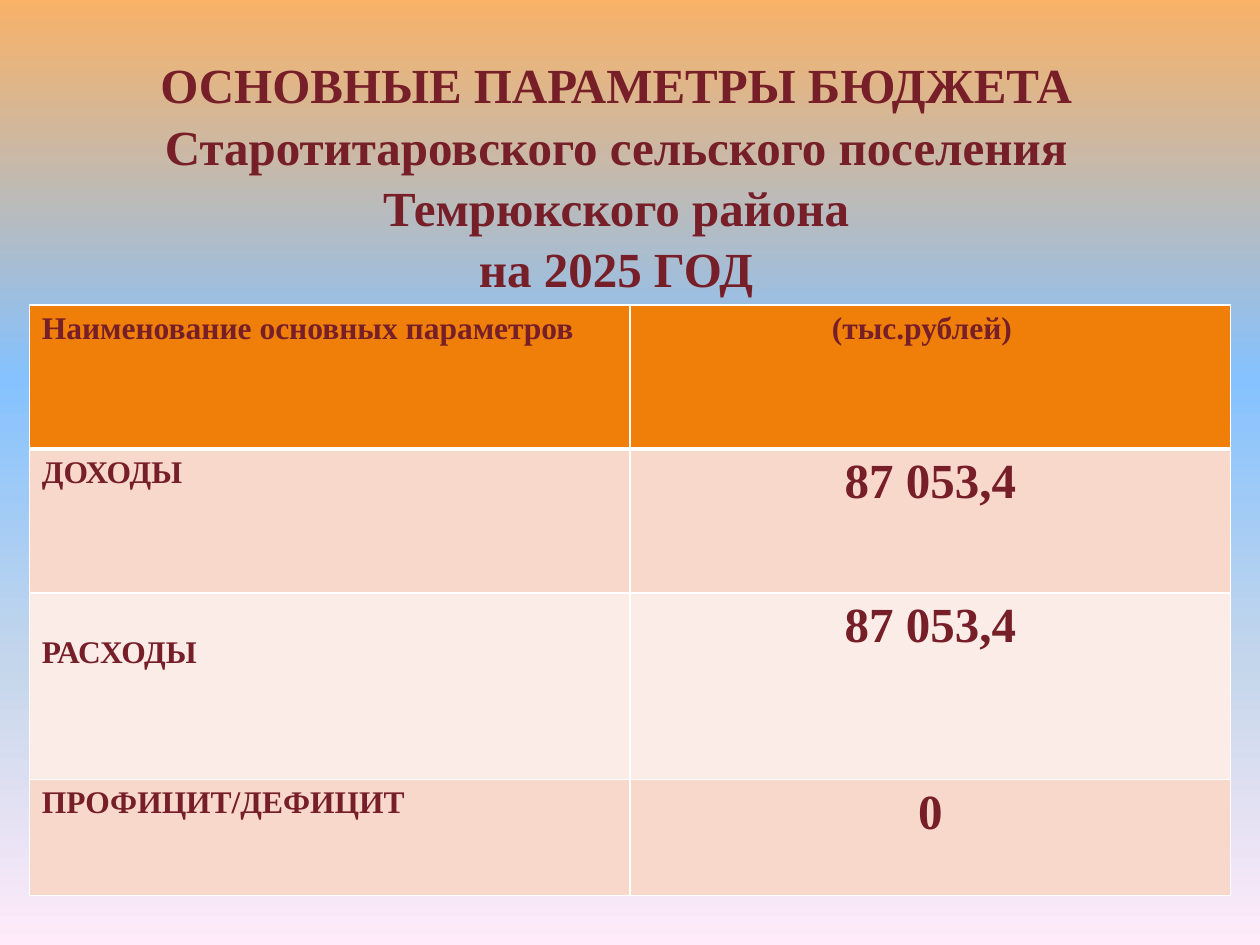
from lxml import etree
from pptx import Presentation
from pptx.dml.color import RGBColor
from pptx.enum import text as t
from pptx.oxml import ns
from pptx.util import Cm, Pt

COLORS = {
    "text": "771F28",
    "header": "F07F09",
    "band": "F9D8CC",
    "light": "FCECE7",
    "border": "FFFFFF",
}
BACKGROUND = [(0, "F9B268"), (40, "85C2FF"), (70, "C4D6EB"), (100, "FFEBFA")]
TITLE = (
    "ОСНОВНЫЕ ПАРАМЕТРЫ БЮДЖЕТА Старотитаровского сельского поселения "
    "Темрюкского района\nна 2025 ГОД"
)
ROWS = [
    ("Наименование основных параметров", "(тыс.рублей)"),
    ("ДОХОДЫ", "87 053,4"),
    ("РАСХОДЫ", "87 053,4"),
    ("ПРОФИЦИТ/ДЕФИЦИТ", "0"),
]
ROW_FILLS = ["header", "band", "light", "band"]
ROW_HEIGHTS = [2.9, 2.9, 3.76, 2.34]


def write_text(frame, content, size=18, align=t.PP_ALIGN.LEFT, spacing=1.0):
    """Fill a text frame with bold text, one paragraph per line."""
    frame.text = content
    for paragraph in frame.paragraphs:
        paragraph.alignment = align
        paragraph.line_spacing = spacing
        for run in paragraph.runs:
            run.font.name = "Times New Roman"
            run.font.size = Pt(size)
            run.font.bold = True
            run.font.color.rgb = RGBColor.from_string(COLORS["text"])


def add_color(parent, color):
    """Append an RGB colour element."""
    etree.SubElement(parent, ns.qn("a:srgbClr"), val=color)


class BudgetSlide:
    """Hold the slide and build its elements in the budget style."""

    def __init__(self, presentation):
        self.slide = presentation.slides.add_slide(presentation.slide_layouts[5])

    def background(self, stops):
        """Paint a top-to-bottom gradient behind the slide."""
        fill = self.slide.background.fill
        fill.gradient()
        fill.gradient_angle = 270
        stop_list = next(self.slide.element.iter(ns.qn("a:gsLst")))
        for stop in list(stop_list):
            stop_list.remove(stop)
        for position, color in stops:
            stop = etree.SubElement(stop_list, ns.qn("a:gs"), pos=str(position * 1000))
            add_color(stop, color)

    def title(self, content, left, top, width, height):
        """Place and format the title placeholder."""
        shape = self.slide.shapes.title
        shape.left, shape.top = Cm(left), Cm(top)
        shape.width, shape.height = Cm(width), Cm(height)
        frame = shape.text_frame
        frame.word_wrap = True
        frame.auto_size = t.MSO_AUTO_SIZE.NONE
        frame.vertical_anchor = t.MSO_ANCHOR.MIDDLE
        write_text(frame, content, size=28, align=t.PP_ALIGN.CENTER, spacing=1.04)

    def borders(self, cell, **widths):
        """Draw the cell borders, with widths in points by side."""
        properties = cell._tc.get_or_add_tcPr()
        for index, side in enumerate("LRTB"):
            width = str(Pt(widths.get(side, 1)))
            line = etree.Element(ns.qn(f"a:ln{side}"), w=width)
            add_color(etree.SubElement(line, ns.qn("a:solidFill")), COLORS["border"])
            properties.insert(index, line)

    def table(self, left, top, width):
        """Add the table of budget parameters."""
        frame = self.slide.shapes.add_table(
            len(ROWS), 2, Cm(left), Cm(top), Cm(width), Cm(sum(ROW_HEIGHTS))
        )
        table = frame.table
        for row_index, values in enumerate(ROWS):
            table.rows[row_index].height = Cm(ROW_HEIGHTS[row_index])
            is_header = row_index == 0
            for column_index, value in enumerate(values):
                cell = table.cell(row_index, column_index)
                cell.fill.solid()
                fill_color = COLORS[ROW_FILLS[row_index]]
                cell.fill.fore_color.rgb = RGBColor.from_string(fill_color)
                self.borders(cell, B=3 if is_header else 1, T=3 if row_index == 1 else 1)
                if column_index and not is_header:
                    write_text(cell.text_frame, value, size=28, align=t.PP_ALIGN.CENTER)
                else:
                    write_text(cell.text_frame, value)
        table.cell(0, 1).margin_left = Cm(4.07)
        table.cell(2, 0).margin_top = Cm(0.86)


def main():
    """Build and save the presentation."""
    presentation = Presentation()
    presentation.slide_width, presentation.slide_height = Cm(25.4), Cm(19.05)
    budget = BudgetSlide(presentation)
    budget.background(BACKGROUND)
    budget.title(TITLE, left=0.84, top=1.15, width=23.16, height=4.75)
    budget.table(left=0.59, top=6.15, width=24.22)
    presentation.save("out.pptx")


if __name__ == "__main__":
    main()
